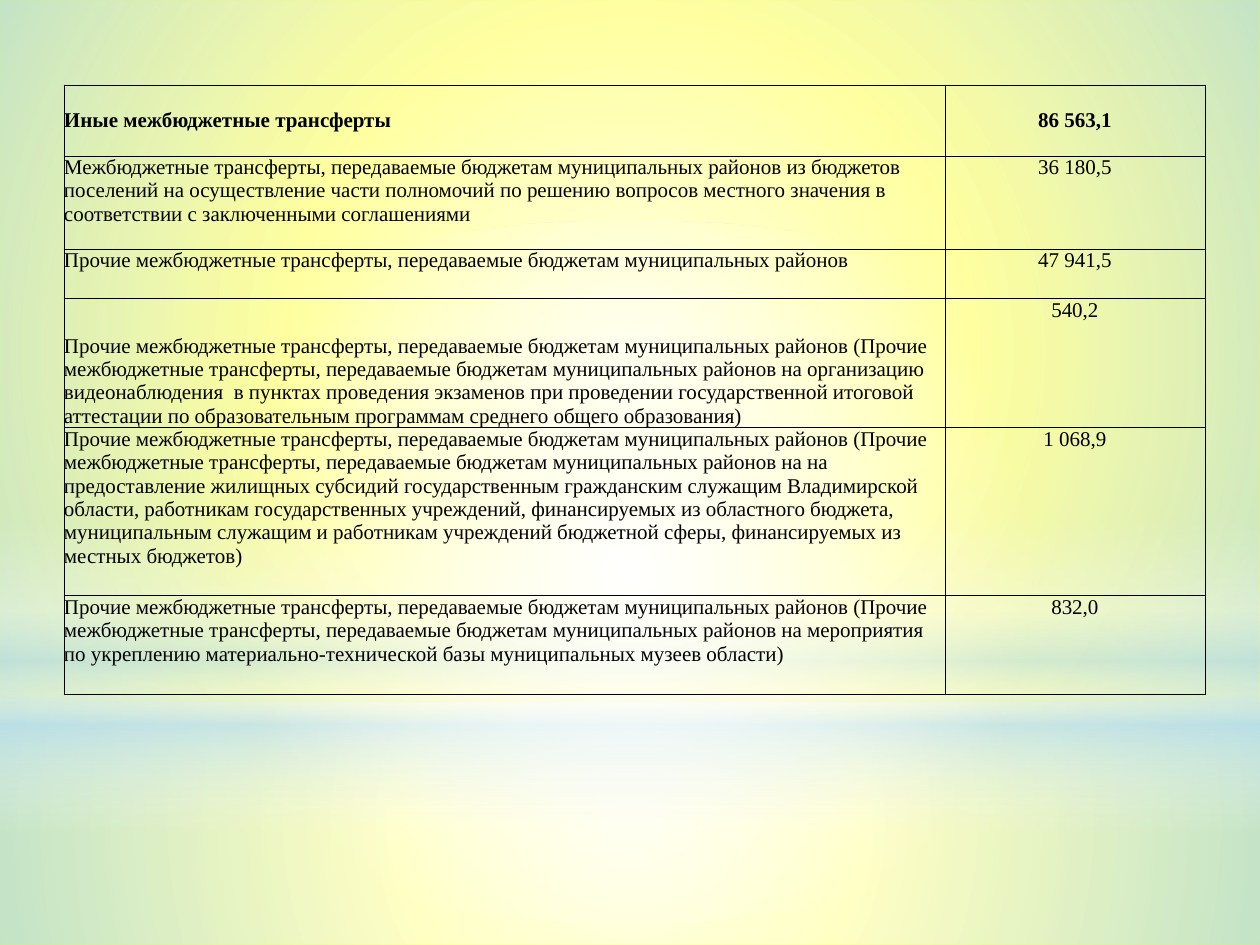
import pptx
import pptx.util
import pptx.dml.color
import pptx.enum.shapes
import pptx.enum.text
import pptx.oxml
import pptx.oxml.ns
from lxml import etree

SCALE = 914400 / 126  # EMU per px
A = "http://schemas.openxmlformats.org/drawingml/2006/main"
SHAPE = pptx.enum.shapes.MSO_SHAPE
ANCHOR = pptx.enum.text.MSO_ANCHOR
ALIGN = pptx.enum.text.PP_ALIGN


def color(value):
    return pptx.dml.color.RGBColor.from_string(value)


def write(tf, text, size=12, bold=False, align=ALIGN.LEFT):
    p = tf.paragraphs[0]
    p.alignment = align
    r = p.add_run()
    r.text = text
    r.font.name = "Times New Roman"
    r.font.size = pptx.util.Pt(size)
    r.font.bold = bold
    r.font.color.rgb = color("000000")


prs = pptx.Presentation()
prs.slide_width = round(1260 * SCALE)
prs.slide_height = round(945 * SCALE)
s = prs.slides.add_slide(prs.slide_layouts[6])
s.background.fill.solid()
s.background.fill.fore_color.rgb = color("FFFF00")

# Background glow: shape, box in px, gradient direction, stops (position, colour, opacity)
WHITE, BLUE = "FFFFFF", "B4DCFA"
RADIAL = ('<a:path path="circle"><a:fillToRect l="50000" t="50000" '
          'r="50000" b="50000"/></a:path>')
LINEAR = '<a:lin ang="5400000" scaled="0"/>'
glows = [
    (SHAPE.RECTANGLE, (0, 703, 1260, 242), RADIAL,
     [(0, WHITE, 91), (37, WHITE, 76), (100, BLUE, 79)]),
    (SHAPE.RECTANGLE, (0, 0, 1260, 703), RADIAL,
     [(0, WHITE, 89), (48, WHITE, 62), (100, BLUE, 79)]),
    (SHAPE.RECTANGLE, (0, 519, 1260, 315), LINEAR,
     [(0, WHITE, 0), (29, WHITE, 30), (45, BLUE, 40),
      (55, WHITE, 26), (65, BLUE, 60), (100, WHITE, 0)]),
    (SHAPE.OVAL, (0, 221, 1260, 703), RADIAL,
     [(0, WHITE, 100), (56, WHITE, 0)]),
]
for kind, box, direction, stops in glows:
    sp = s.shapes.add_shape(kind, *(round(v * SCALE) for v in box))
    sp.shadow.inherit = False
    sp.line.fill.background()
    sp.fill.background()
    gs = "".join(
        f'<a:gs pos="{pos * 1000}"><a:srgbClr val="{c}">'
        f'<a:alpha val="{alpha * 1000}"/></a:srgbClr></a:gs>'
        for pos, c, alpha in stops)
    grad = pptx.oxml.parse_xml(
        f'<a:gradFill xmlns:a="{A}" rotWithShape="1">'
        f'<a:gsLst>{gs}</a:gsLst>{direction}</a:gradFill>')
    spPr = sp.fill._xPr
    spPr.replace(spPr.find(pptx.oxml.ns.qn("a:noFill")), grad)

# Table of transfers: row height in px, anchor of the name, name, amount
OTHER = "Прочие межбюджетные трансферты, передаваемые бюджетам муниципальных районов"
DETAIL = OTHER + " (" + OTHER + " на "
rows = [
    (71, ANCHOR.MIDDLE, "Иные межбюджетные трансферты", "86 563,1"),
    (93, ANCHOR.TOP,
     "Межбюджетные трансферты, передаваемые бюджетам муниципальных районов из "
     "бюджетов поселений на осуществление части полномочий по решению вопросов "
     "местного значения в соответствии с заключенными соглашениями", "36 180,5"),
    (50, ANCHOR.TOP, OTHER, "47 941,5"),
    (129, ANCHOR.BOTTOM, DETAIL +
     "организацию видеонаблюдения  в пунктах проведения экзаменов при проведении "
     "государственной итоговой аттестации по образовательным программам среднего "
     "общего образования)", "540,2"),
    (168, ANCHOR.TOP, DETAIL +
     "на предоставление жилищных субсидий государственным гражданским служащим "
     "Владимирской области, работникам государственных учреждений, финансируемых "
     "из областного бюджета, муниципальным служащим и работникам учреждений "
     "бюджетной сферы, финансируемых из местных бюджетов)", "1 068,9"),
    (99, ANCHOR.TOP, DETAIL +
     "мероприятия по укреплению материально-технической базы муниципальных "
     "музеев области)", "832,0"),
]
widths = [881, 260]
box = (64, 85, sum(widths), sum(row[0] for row in rows))
table = s.shapes.add_table(len(rows), 2, *(round(v * SCALE) for v in box)).table
table.first_row = False
table.horz_banding = False
for column, width in zip(table.columns, widths):
    column.width = round(width * SCALE)

for i, (height, anchor, name, amount) in enumerate(rows):
    table.rows[i].height = round(height * SCALE)
    for j, text in enumerate((name, amount)):
        cell = table.cell(i, j)
        cell.margin_left = cell.margin_right = 0
        cell.margin_top = cell.margin_bottom = 0
        cell.vertical_anchor = anchor if j == 0 or i == 0 else ANCHOR.TOP
        write(cell.text_frame, text, bold=i == 0,
              align=ALIGN.CENTER if j else ALIGN.LEFT)
        cell.fill.background()
        # Thin black borders, placed before the fill
        tcPr = cell._tc.get_or_add_tcPr()
        for k, side in enumerate(("lnL", "lnR", "lnT", "lnB")):
            tcPr.insert(k, etree.fromstring(
                f'<a:{side} xmlns:a="{A}" w="6350"><a:solidFill>'
                f'<a:srgbClr val="000000"/></a:solidFill></a:{side}>'))

prs.save("out.pptx")
